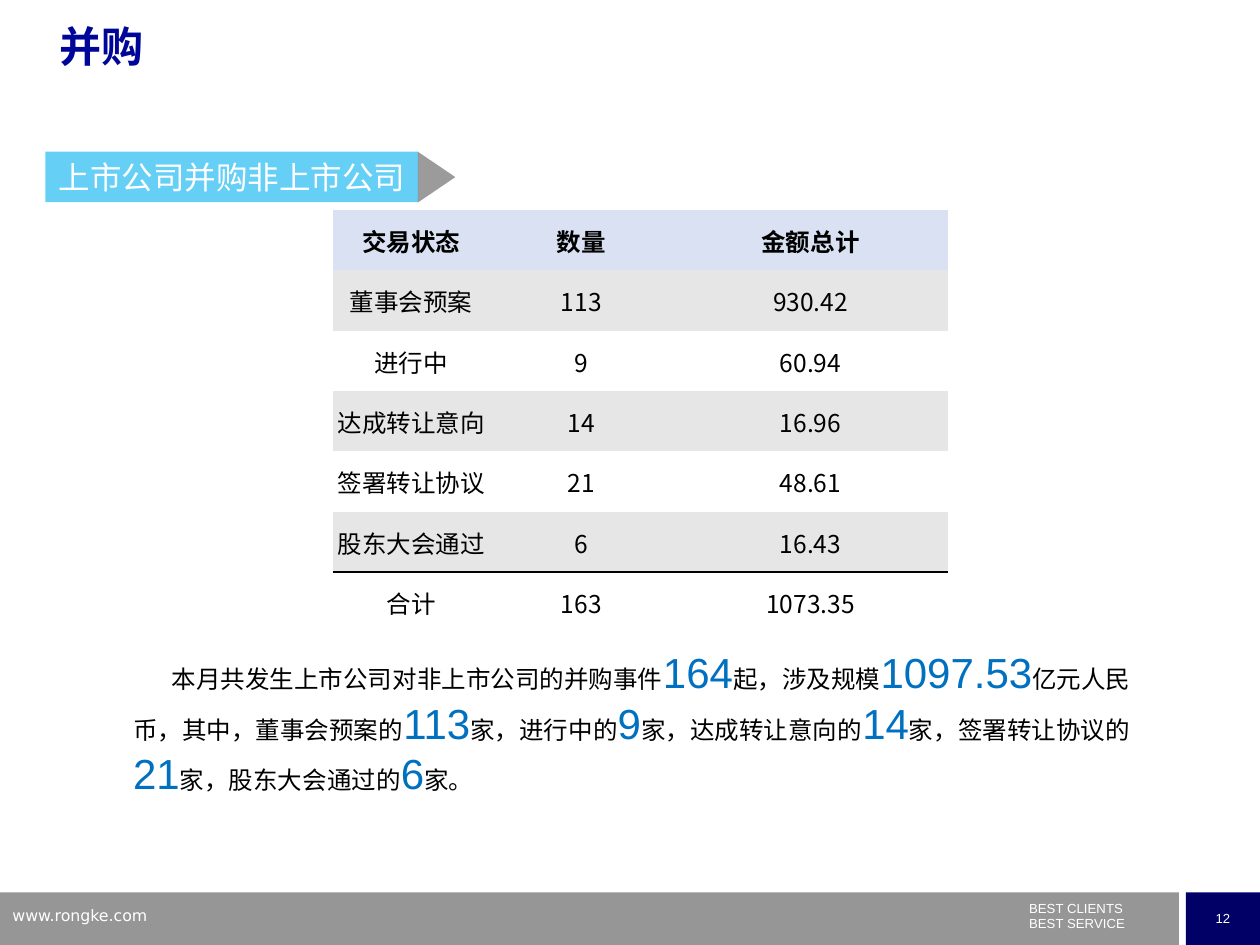
import pptx
import pptx.util
import pptx.dml.color
import pptx.enum.shapes
import pptx.enum.text
import pptx.oxml
import pptx.oxml.ns

Pt = pptx.util.Pt
SHAPE = pptx.enum.shapes.MSO_SHAPE
ALIGN = pptx.enum.text.PP_ALIGN
ANCHOR = pptx.enum.text.MSO_ANCHOR

COLORS = {
    "white": "FFFFFF", "black": "000000", "footer": "969696", "navy": "000066",
    "title": "000798", "banner": "00B0F0", "tip": "595959", "number": "0070C0",
    "header": "D9E1F2", "band": "E7E6E6",
}
CJK = "Noto Sans CJK SC"
NO_STYLE = "{2D5ABB26-0587-4C30-8999-92F81FD0307C}"

TITLE = "并购"
BANNER = "上市公司并购非上市公司"
ROWS = [
    ("交易状态", "数量", "金额总计"),
    ("董事会预案", "113", "930.42"),
    ("进行中", "9", "60.94"),
    ("达成转让意向", "14", "16.96"),
    ("签署转让协议", "21", "48.61"),
    ("股东大会通过", "6", "16.43"),
    ("合计", "163", "1073.35"),
]
COL_WIDTHS = (90, 104.4, 157.6)
ROW_HEIGHT = 34.5
SUMMARY = [
    ("本月共发生上市公司对非上市公司的并购事件", "164"),
    ("起，涉及规模", "1097.53"),
    ("亿元人民币，其中，董事会预案的", "113"),
    ("家，进行中的", "9"),
    ("家，达成转让意向的", "14"),
    ("家，签署转让协议的", "21"),
    ("家，股东大会通过的", "6"),
    ("家。", ""),
]
SLOGAN = ("BEST CLIENTS", "BEST SERVICE")
WEBSITE = "www.rongke.com"
PAGE = "12"


def rgb(name):
    return pptx.dml.color.RGBColor.from_string(COLORS[name])


def set_font(font, size, color, name=CJK, bold=False):
    font.size = Pt(size)
    font.bold = bold
    font.color.rgb = rgb(color)
    font.name = name
    ea = pptx.oxml.parse_xml(f'<a:ea {pptx.oxml.ns.nsdecls("a")} typeface="{CJK}"/>')
    font._element.find(pptx.oxml.ns.qn("a:latin")).addnext(ea)


def add_block(s, kind, box, color, alpha=None):
    sp = s.shapes.add_shape(kind, *map(Pt, box))
    sp.shadow.inherit = False
    sp.fill.solid()
    sp.fill.fore_color.rgb = rgb(color)
    sp.line.fill.background()
    if alpha:
        clr = sp.fill._xPr.find(".//" + pptx.oxml.ns.qn("a:srgbClr"))
        clr.append(pptx.oxml.parse_xml(
            f'<a:alpha {pptx.oxml.ns.nsdecls("a")} val="{alpha * 1000}"/>'))
    return sp


def add_label(sp, text, size, name):
    tf = sp.text_frame
    tf.word_wrap = False
    tf.vertical_anchor = ANCHOR.MIDDLE
    p = tf.paragraphs[0]
    p.text = text
    p.alignment = ALIGN.CENTER
    set_font(p.font, size, "white", name)


def add_text(s, box, lines, size, name):
    tf = s.shapes.add_textbox(*map(Pt, box)).text_frame
    tf.word_wrap = True
    for i, line in enumerate(lines):
        p = tf.add_paragraph() if i else tf.paragraphs[0]
        p.text = line
        set_font(p.font, size, "white", name)
    return tf


def add_border(cell, side):
    cell._tc.get_or_add_tcPr().insert(0, pptx.oxml.parse_xml(
        f'<a:{side} {pptx.oxml.ns.nsdecls("a")} w="12700"><a:solidFill>'
        f'<a:srgbClr val="{COLORS["black"]}"/></a:solidFill></a:{side}>'))


def add_deals(s):
    frame = s.shapes.add_table(len(ROWS), len(COL_WIDTHS), Pt(190), Pt(120),
                               Pt(sum(COL_WIDTHS)), Pt(ROW_HEIGHT * len(ROWS)))
    table = frame.table
    table.first_row = table.horz_banding = False
    table._tbl.tblPr.find(pptx.oxml.ns.qn("a:tableStyleId")).text = NO_STYLE
    for column, width in zip(table.columns, COL_WIDTHS):
        column.width = Pt(width)
    total = len(ROWS) - 1
    for i, row in enumerate(ROWS):
        table.rows[i].height = Pt(ROW_HEIGHT)
        fill = "header" if i == 0 else "band" if i % 2 else "white"
        for j, text in enumerate(row):
            cell = table.cell(i, j)
            cell.margin_left = cell.margin_right = cell.margin_top = Pt(0.7)
            cell.margin_bottom = 0
            cell.vertical_anchor = ANCHOR.MIDDLE
            cell.fill.solid()
            cell.fill.fore_color.rgb = rgb(fill)
            p = cell.text_frame.paragraphs[0]
            p.text = text
            p.alignment = ALIGN.CENTER
            set_font(p.font, 14, "black", bold=i == 0)
            if i == total - 1:
                add_border(cell, "lnB")
            if i == total:
                add_border(cell, "lnT")


def add_summary(s):
    tf = s.shapes.add_textbox(Pt(69), Pt(366), Pt(593), Pt(94)).text_frame
    tf.word_wrap = True
    p = tf.paragraphs[0]
    p._p.get_or_add_pPr().set("indent", str(Pt(22)))
    for words, number in SUMMARY:
        r = p.add_run()
        r.text = words
        set_font(r.font, 14, "black")
        if number:
            r = p.add_run()
            r.text = number
            set_font(r.font, 24, "number", "Arial")


def add_title(s):
    sp = s.shapes.title
    sp.left, sp.top, sp.width, sp.height = map(Pt, (26.6, 11.5, 648, 50.4))
    tf = sp.text_frame
    tf.auto_size = pptx.enum.text.MSO_AUTO_SIZE.NONE
    tf.vertical_anchor = ANCHOR.TOP
    p = tf.paragraphs[0]
    p.text = TITLE
    p.alignment = ALIGN.LEFT
    p.line_spacing = 0.9
    set_font(p.font, 24, "title", "Arial", True)


def main():
    prs = pptx.Presentation()
    prs.slide_width, prs.slide_height = Pt(720), Pt(540)
    s = prs.slides.add_slide(prs.slide_layouts[5])

    add_block(s, SHAPE.RECTANGLE, (0, 510, 673.7, 30), "footer")
    page = add_block(s, SHAPE.RECTANGLE, (677.7, 510, 42.3, 30), "navy")
    add_label(page, PAGE, 7.5, "Arial")
    slogan = add_text(s, (581, 514.3, 108, 21), SLOGAN, 7.5, "Arial")
    slogan.margin_top = slogan.margin_bottom = 0
    add_text(s, (0, 514, 173, 19), [WEBSITE], 9, "DejaVu Sans")

    banner = add_block(s, SHAPE.RECTANGLE, (26, 86.6, 213, 29), "banner", 60)
    add_label(banner, BANNER, 18, CJK)
    tip = add_block(s, SHAPE.ISOSCELES_TRIANGLE, (235, 90.5, 29, 21.4), "tip", 60)
    tip.rotation = 90

    add_title(s)
    add_summary(s)
    add_deals(s)
    prs.save("out.pptx")


if __name__ == "__main__":
    main()
